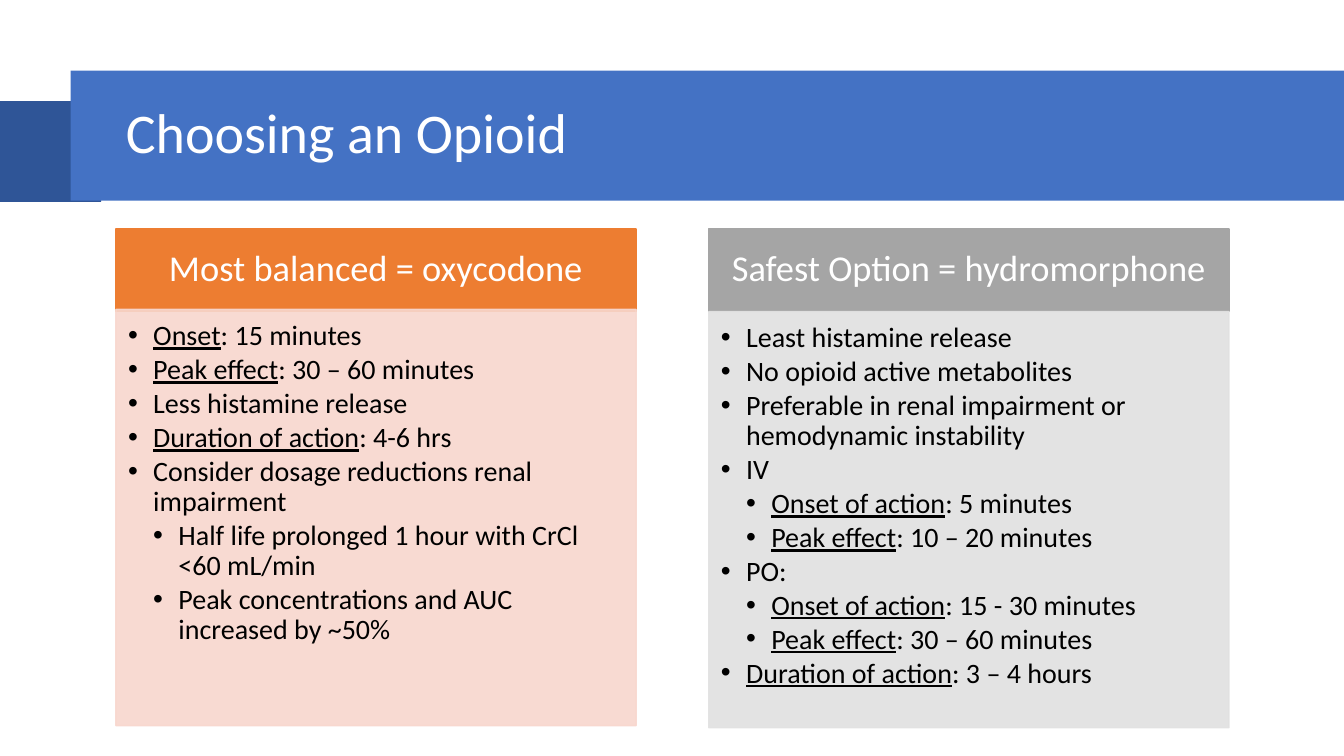
from lxml import etree
from pptx import Presentation
from pptx.dml.color import RGBColor
from pptx.enum.shapes import MSO_SHAPE as Shape
from pptx.enum.text import MSO_ANCHOR as Anchor, PP_ALIGN as Align
from pptx.oxml.ns import qn
from pptx.util import Inches, Pt

WHITE = RGBColor(0xFF, 0xFF, 0xFF)
BLACK = RGBColor(0x00, 0x00, 0x00)
BLUE = RGBColor(0x44, 0x72, 0xC4)
BLUE_DARK = RGBColor(0x2F, 0x55, 0x97)
BLUE_DEEP = RGBColor(0x20, 0x38, 0x64)
ORANGE = RGBColor(0xED, 0x7D, 0x31)
ORANGE_PALE = RGBColor(0xF8, 0xD7, 0xCE)
GRAY = RGBColor(0xA5, 0xA5, 0xA5)
GRAY_PALE = RGBColor(0xE1, 0xE1, 0xE1)

COLUMN_WIDTH = 5.16
COLUMN_TOP = 2.27
HEADING_INSETS = (0.2, 0.12, 0.2, 0.12)
BODY_INSETS = (0.12, 0.12, 0.16, 0.17)

# Each point is (level, underlined lead, plain text)
OXYCODONE = [
    (1, "Onset", ": 15 minutes"),
    (1, "Peak effect", ": 30 – 60 minutes"),
    (1, "", "Less histamine release"),
    (1, "Duration of action", ": 4-6 hrs"),
    (1, "", "Consider dosage reductions renal impairment"),
    (2, "", "Half life prolonged 1 hour with CrCl <60 mL/min"),
    (2, "", "Peak concentrations and AUC increased by ~50%"),
]
HYDROMORPHONE = [
    (1, "", "Least histamine release"),
    (1, "", "No opioid active metabolites"),
    (1, "", "Preferable in renal impairment or hemodynamic instability"),
    (1, "", "IV"),
    (2, "Onset of action", ": 5 minutes"),
    (2, "Peak effect", ": 10 – 20 minutes"),
    (1, "", "PO:"),
    (2, "Onset of action", ": 15 - 30 minutes"),
    (2, "Peak effect", ": 30 – 60 minutes"),
    (1, "Duration of action", ": 3 – 4 hours"),
]


def add_span(para, text, size=20, color=BLACK, underline=None):
    span = para.add_run()
    span.text = text
    font = span.font
    font.name, font.size, font.underline = "Calibri", Pt(size), underline
    font.color.rgb = color


def set_alpha(fill_element, percent):
    color = fill_element.find(".//" + qn("a:srgbClr"))
    etree.SubElement(color, qn("a:alpha")).set("val", str(percent * 1000))


class SlideBuilder:
    def __init__(self, page):
        self.page = page

    def rectangle(self, left, top, width, height, color, outlined=False, alpha=None):
        box = self.page.shapes.add_shape(
            Shape.RECTANGLE, Inches(left), Inches(top), Inches(width), Inches(height))
        box.shadow.inherit = False
        box.fill.solid()
        box.fill.fore_color.rgb = color
        if outlined:
            box.line.color.rgb = color
            box.line.width = Pt(1)
        else:
            box.line.fill.background()
        if alpha:
            properties = box.fill._xPr
            set_alpha(properties.find(qn("a:solidFill")), alpha)
            set_alpha(properties.find(qn("a:ln")), alpha)
        return box

    def fold(self, points, color):
        """Draw a ribbon fold from points in inches."""
        builder = self.page.shapes.build_freeform(*points[0], scale=Inches(1))
        builder.add_line_segments(points[1:], close=True)
        outline = builder.convert_to_shape()
        outline.shadow.inherit = False
        outline.fill.solid()
        outline.fill.fore_color.rgb = color
        outline.line.fill.background()

    def frame(self, box, insets, anchor):
        frame = box.text_frame
        frame.word_wrap = True
        frame.vertical_anchor = anchor
        (frame.margin_left, frame.margin_top,
         frame.margin_right, frame.margin_bottom) = map(Inches, insets)
        return frame

    def line_of_text(self, box, text, size, insets, align):
        para = self.frame(box, insets, Anchor.MIDDLE).paragraphs[0]
        para.alignment = align
        para.line_spacing = 0.9
        add_span(para, text, size=size, color=WHITE)

    def title(self, text, left, top, width, height):
        box = self.page.shapes.add_textbox(
            Inches(left), Inches(top), Inches(width), Inches(height))
        self.line_of_text(box, text, 40, (0.1, 0.05, 0.1, 0.05), Align.LEFT)

    def bullets(self, box, points):
        frame = self.frame(box, BODY_INSETS, Anchor.TOP)
        for index, (level, lead, text) in enumerate(points):
            para = frame.add_paragraph() if index else frame.paragraphs[0]
            para.alignment = Align.LEFT
            para.level = level
            para.line_spacing = 0.9
            para.space_after = Pt(2.6)
            properties = para._p.get_or_add_pPr()
            properties.set("marL", str(Inches(0.25 * level)))
            properties.set("indent", str(Inches(-0.25)))
            etree.SubElement(properties, qn("a:buFont")).set("typeface", "Arial")
            etree.SubElement(properties, qn("a:buChar")).set("char", "•")
            if lead:
                add_span(para, lead, underline=True)
            add_span(para, text)

    def column(self, left, body_top, heading, points, color, pale):
        head = self.rectangle(left, COLUMN_TOP, COLUMN_WIDTH, 0.82, color, outlined=True)
        self.line_of_text(head, heading, 26, HEADING_INSETS, Align.CENTER)
        body = self.rectangle(left, body_top, COLUMN_WIDTH, 4.13, pale,
                              outlined=True, alpha=90)
        self.bullets(body, points)


def main():
    deck = Presentation()
    deck.slide_width, deck.slide_height = Inches(13.33), Inches(7.5)
    slide = SlideBuilder(deck.slides.add_slide(deck.slide_layouts[6]))

    # Ribbon and title
    slide.fold([(0.89, 2.22), (0.45, 2.39), (0.45, 1.07), (0.89, 0.92)], BLUE_DARK)
    slide.fold([(0.89, 2.17), (0.71, 2.03), (0.71, 0.7), (0.89, 0.85)], BLUE_DEEP)
    slide.rectangle(0.7, 0.7, 12.63, 1.29, BLUE)
    slide.title("Choosing an Opioid", 1.15, 0.86, 11.27, 0.96)

    # Two drug columns
    slide.column(1.15, 3.07, "Most balanced = oxycodone", OXYCODONE,
                 ORANGE, ORANGE_PALE)
    slide.column(7.03, 3.09, "Safest Option = hydromorphone", HYDROMORPHONE,
                 GRAY, GRAY_PALE)

    deck.save("out.pptx")


if __name__ == "__main__":
    main()
